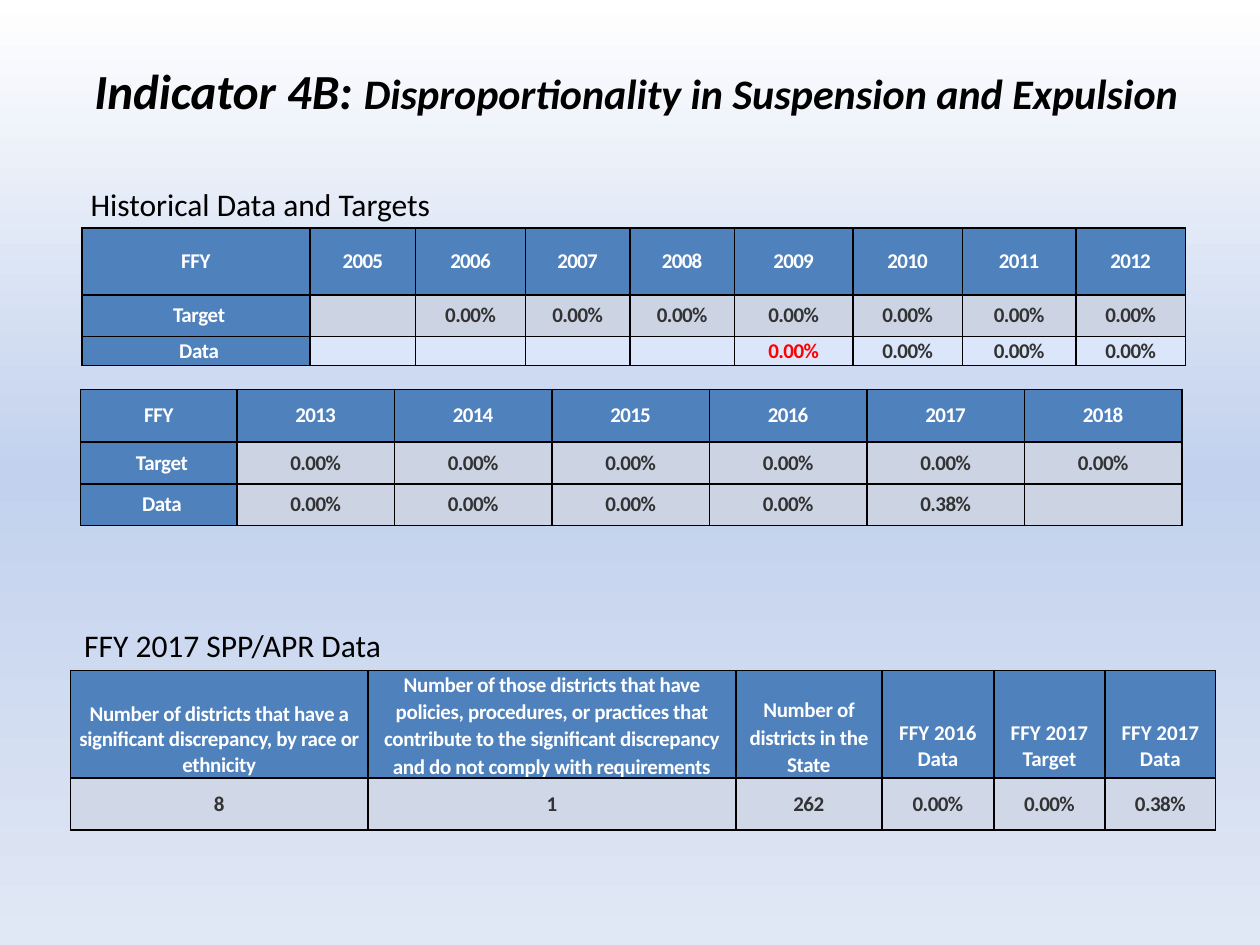
from copy import deepcopy

from pptx import Presentation
from pptx.dml.color import RGBColor
from pptx.enum.text import MSO_ANCHOR as Anchor, MSO_AUTO_SIZE as AutoSize, PP_ALIGN as Align
from pptx.oxml import parse_xml
from pptx.oxml.ns import nsdecls, qn
from pptx.util import Inches, Pt

FONT = "Calibri"
BLACK, WHITE, GRAY, RED = "000000", "FFFFFF", "333333", "FF0000"
HEADER_BLUE, TARGET_FILL, DATA_FILL, RESULT_FILL = "4F81BD", "CCD4E4", "DCE6FA", "D0D8E8"
CELL_SIZE = 12
ZERO = "0.00%"


def color(hex_string):
    return RGBColor.from_string(hex_string)


def style_run(run, size, hex_string, bold=False, italic=False, spacing=0):
    font = run.font
    font.name, font.size, font.bold, font.italic = FONT, Pt(size), bold, italic
    font.color.rgb = color(hex_string)
    if spacing:
        run._r.get_or_add_rPr().set("spc", str(round(spacing * 100)))


def set_background(slide, stops):
    fill = slide.background.fill
    fill.gradient()
    fill.gradient_angle = 270
    stop_list = slide._element.find(".//" + qn("a:gsLst"))
    stop_list.append(deepcopy(stop_list[0]))
    for stop, (position, hex_string) in zip(fill.gradient_stops, stops):
        stop.position = position
        stop.color.rgb = color(hex_string)


def add_text_box(slide, left, top, width, height):
    shape = slide.shapes.add_textbox(*map(Inches, (left, top, width, height)))
    shape.text_frame.word_wrap = True
    return shape.text_frame


def add_title(slide, parts):
    frame = add_text_box(slide, 0.55, 0.17, 9, 1.08)
    frame.vertical_anchor = Anchor.MIDDLE
    paragraph = frame.paragraphs[0]
    paragraph.alignment = Align.CENTER
    for text, size in parts:
        run = paragraph.add_run()
        run.text = text
        style_run(run, size, BLACK, bold=True, italic=True)


def add_caption(slide, left, top, text):
    frame = add_text_box(slide, left, top, 5.08, 0.4)
    frame.auto_size = AutoSize.SHAPE_TO_FIT_TEXT
    frame.text = text
    style_run(frame.paragraphs[0].runs[0], 18, BLACK)


def add_borders(cell):
    properties = cell._tc.get_or_add_tcPr()
    for side in ("lnL", "lnR", "lnT", "lnB"):
        properties.append(parse_xml(
            f'<a:{side} {nsdecls("a")} w="12700"><a:solidFill>'
            f'<a:srgbClr val="{BLACK}"/></a:solidFill></a:{side}>'))


def fill_cell(cell, text, fill, text_color, spacing=-0.3, anchor=Anchor.MIDDLE):
    add_borders(cell)
    cell.fill.solid()
    cell.fill.fore_color.rgb = color(fill)
    cell.vertical_anchor = anchor
    cell.margin_left = cell.margin_right = cell.margin_top = cell.margin_bottom = 0
    cell.text_frame.text = text
    for paragraph in cell.text_frame.paragraphs:
        paragraph.alignment = Align.CENTER
        for run in paragraph.runs:
            style_run(run, CELL_SIZE, text_color, bold=True, spacing=spacing)
        if not text:
            paragraph._p.get_or_add_endParaRPr().set("sz", str(CELL_SIZE * 100))


def add_grid(slide, left, top, widths, heights):
    frame = slide.shapes.add_table(
        len(heights), len(widths), Inches(left), Inches(top),
        Inches(sum(widths)), Inches(sum(heights)))
    table = frame.table
    table.first_row = table.horz_banding = False
    for column, width in zip(table.columns, widths):
        column.width = Inches(width)
    for row, height in zip(table.rows, heights):
        row.height = Inches(height)
    return table


def add_year_table(slide, left, top, widths, heights, years, targets, data, data_fill):
    table = add_grid(slide, left, top, widths, heights)
    rows = [["FFY", *years], ["Target", *targets], ["Data", *data]]
    for row_index, row in enumerate(rows):
        for column_index, value in enumerate(row):
            cell = table.cell(row_index, column_index)
            if row_index == 0 or column_index == 0:
                fill_cell(cell, str(value), HEADER_BLUE, WHITE, -0.2 if column_index == 0 else -0.4)
            else:
                fill_cell(cell, value, TARGET_FILL if row_index == 1 else data_fill, GRAY)
        if row_index:
            table.cell(row_index, 0).margin_left = Inches(0.05)
    return table


def add_result_table(slide, left, top, widths, heights, columns):
    table = add_grid(slide, left, top, widths, heights)
    for index, (heading, line_spacing, value) in enumerate(columns):
        cell = table.cell(0, index)
        short = "\n" in heading
        fill_cell(cell, heading, HEADER_BLUE, WHITE, 0 if short else -0.2, Anchor.BOTTOM)
        if short:
            cell.margin_left = cell.margin_right = Inches(0.1)
            cell.margin_top = cell.margin_bottom = Inches(0.05)
        for paragraph in cell.text_frame.paragraphs:
            paragraph.line_spacing = line_spacing
        fill_cell(table.cell(1, index), value, RESULT_FILL, GRAY)


def main():
    presentation = Presentation()
    presentation.slide_width, presentation.slide_height = Inches(10), Inches(7.5)
    slide = presentation.slides.add_slide(presentation.slide_layouts[6])
    set_background(slide, [(0, "FFFFFF"), (0.5, "C2D1ED"), (1, "E1E8F5")])

    add_title(slide, [("Indicator 4B: ", 28),
                      ("Disproportionality in Suspension and Expulsion", 24)])

    history = add_year_table(
        slide, 0.65, 1.81,
        [1.81, 0.84, 0.87, 0.83, 0.83, 0.94, 0.87, 0.9, 0.87], [0.53, 0.33, 0.23],
        range(2005, 2013), [""] + [ZERO] * 7, [""] * 4 + [ZERO] * 4, DATA_FILL)
    first_data_run = history.cell(2, 5).text_frame.paragraphs[0].runs[0]
    first_data_run.font.color.rgb = color(RED)

    add_result_table(
        slide, 0.56, 5.32, [2.36, 2.92, 1.16, 0.89, 0.88, 0.88], [0.75, 0.41],
        [("Number of districts that have a significant discrepancy, by race or ethnicity", 1, "8"),
         ("Number of those districts that have policies, procedures, or practices that "
          "contribute to the significant discrepancy and do not comply with requirements",
          1.07, "1"),
         ("Number of districts in the State", 1.07, "262"),
         ("FFY 2016\nData", 1, ZERO),
         ("FFY 2017\nTarget", 1, ZERO),
         ("FFY 2017\nData", 1, "0.38%")])

    add_caption(slide, 0.62, 1.42, "Historical Data and Targets")
    add_caption(slide, 0.57, 4.92, "FFY 2017 SPP/APR Data")

    add_year_table(
        slide, 0.64, 3.09, [1.24] + [1.25] * 6, [0.42, 0.33, 0.33],
        range(2013, 2019), [ZERO] * 6, [ZERO] * 4 + ["0.38%", ""], TARGET_FILL)

    presentation.save("out.pptx")


if __name__ == "__main__":
    main()
